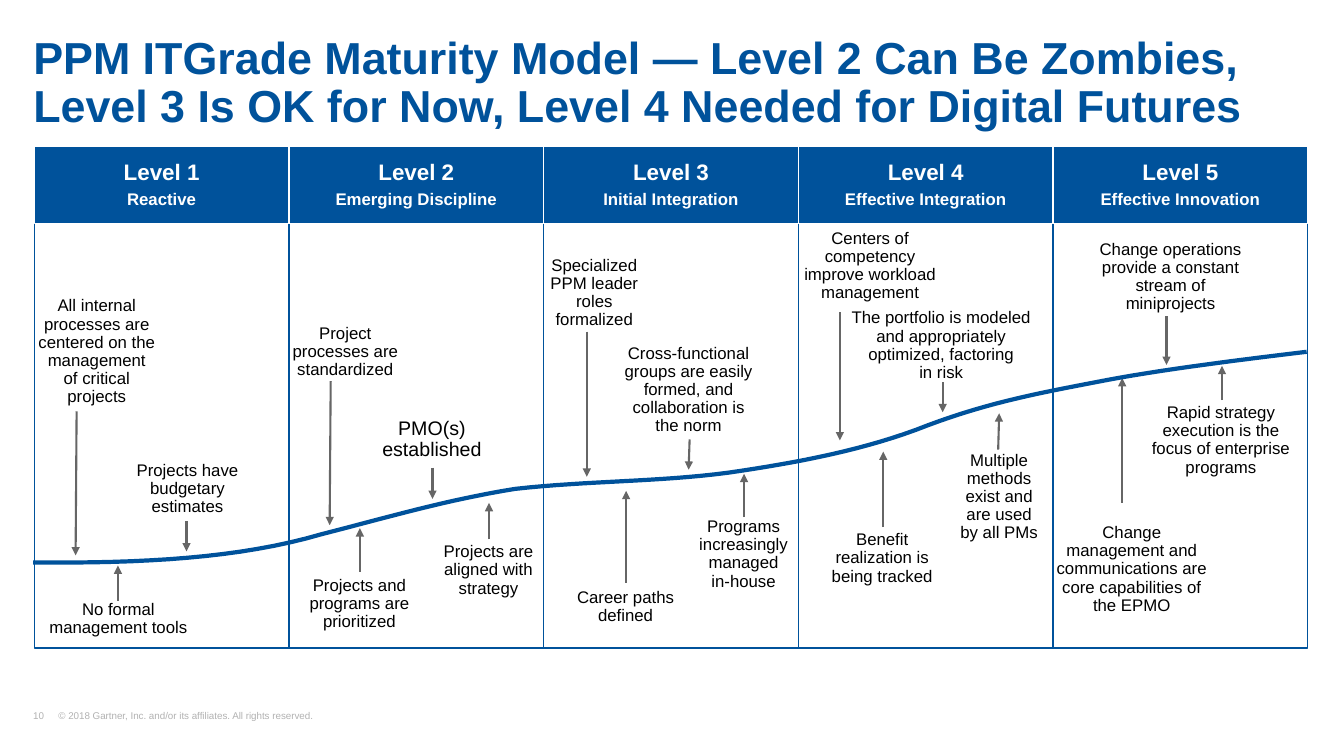
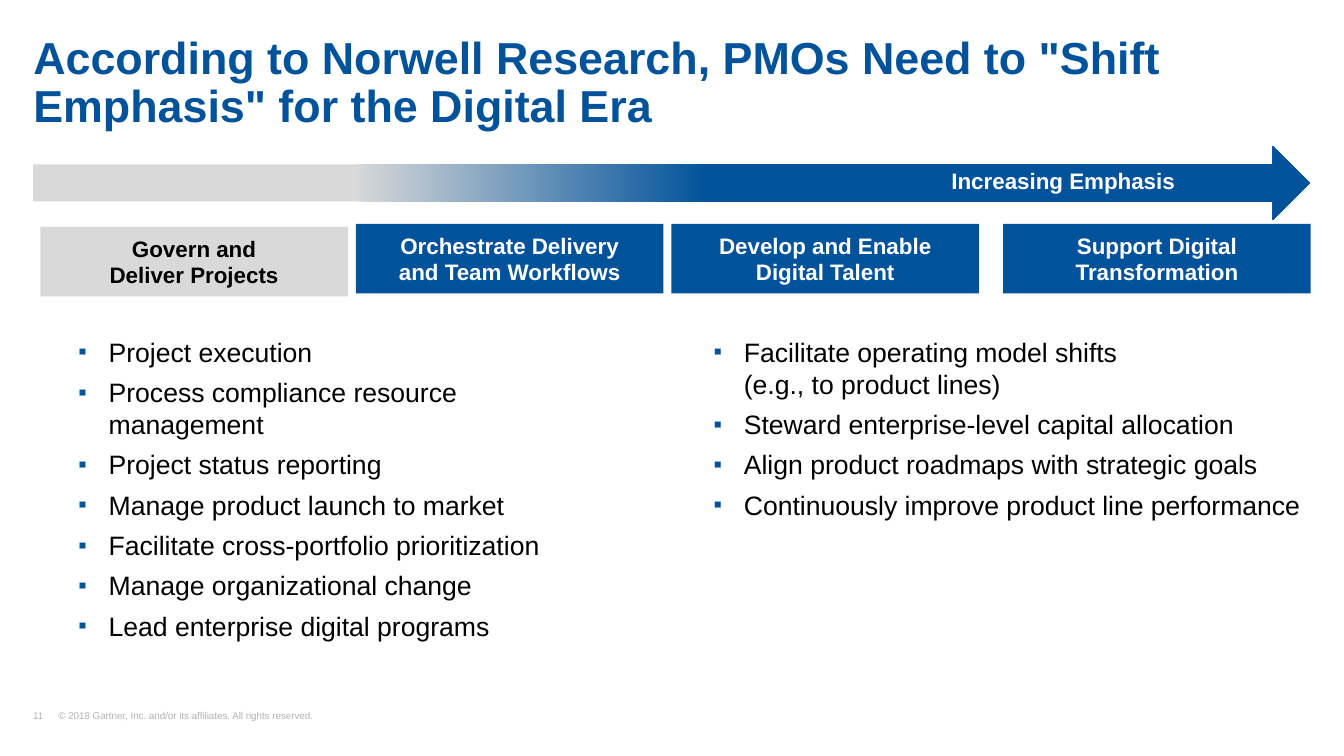
from lxml.etree import SubElement
from pptx import Presentation
from pptx.dml.color import RGBColor
from pptx.enum.shapes import MSO_CONNECTOR, MSO_SHAPE
from pptx.enum.text import MSO_ANCHOR, MSO_AUTO_SIZE, PP_ALIGN
from pptx.oxml.ns import qn
from pptx.util import Inches, Pt

COLORS = {
    "blue": "00529B",
    "silver": "D9D9D9",
    "arrow": "666666",
    "footer": "B2B2B2",
    "white": "FFFFFF",
    "black": "000000",
}
RGB = {name: RGBColor.from_string(value) for name, value in COLORS.items()}
FONT = "Arial"

prs = Presentation()
prs.slide_width, prs.slide_height = Inches(13.33), Inches(7.5)

# Square grid: 75 rows to the slide height
UNIT = prs.slide_height / 75
MARGIN = 3.4
LEVEL_WIDTH = 25.26
HEADER_TOP, HEADER_HEIGHT = 14.5, 7.7
FRAME_TOP, FRAME_BOTTOM = 20.9, 64.3


def grid(*cells):
    """Convert grid counts to slide lengths."""
    return [round(cell * UNIT) for cell in cells]


def write(paragraph, text, size, color, bold=False, align=PP_ALIGN.LEFT, spacing=0.9):
    """Fill a paragraph with one run per line of text."""
    paragraph.alignment = align
    paragraph.line_spacing = spacing
    for index, line in enumerate(text.split("\n")):
        if index:
            paragraph.add_line_break()
        run = paragraph.add_run()
        run.text = line
        run.font.name, run.font.size, run.font.bold = FONT, Pt(size), bold
        run.font.color.rgb = RGB[color]


# Titles and footers
TITLES = {
    10: "PPM ITGrade Maturity Model — Level 2 Can Be Zombies, "
        "Level 3 Is OK for Now, Level 4 Needed for Digital Futures",
    11: 'According to Norwell Research, PMOs Need to "Shift Emphasis" for the Digital Era',
}
slides = []
for number, heading in TITLES.items():
    slide = prs.slides.add_slide(prs.slide_layouts[5])
    slides.append(slide)
    title = slide.shapes.title
    title.left, title.top, title.width, title.height = grid(3.3, 2.5, 126.6, 10.7)
    footer = slide.shapes.add_textbox(*grid(3.3, 70.5, 32.3, 1.1))
    for frame, inset, anchor in (
        (title.text_frame, 1, MSO_ANCHOR.TOP),
        (footer.text_frame, 0, MSO_ANCHOR.BOTTOM),
    ):
        frame.margin_left = frame.margin_right = frame.margin_bottom = 0
        frame.margin_top = grid(inset)[0]
        frame.vertical_anchor = anchor
        frame.word_wrap = True
        frame.auto_size = MSO_AUTO_SIZE.NONE
    write(title.text_frame.paragraphs[0], heading, 32, "blue", bold=True)
    credit = footer.text_frame.paragraphs[0]
    tabs = SubElement(credit._p.get_or_add_pPr(), qn("a:tabLst"))
    SubElement(tabs, qn("a:tab"), pos=str(Inches(0.25)), algn="l")
    write(credit, f"{number}\t© 2018 Gartner, Inc. and/or its affiliates. All rights reserved.",
          7, "footer")
maturity, emphasis = slides

# Practices along the curve: text, box, arrow from and to, text size
PRACTICES = [
    ("All internal\nprocesses are\ncentered on the\nmanagement\nof critical\nprojects",
     (3, 29.4, 13.2, 10.9), (7.6, 40.8), (7.5, 55.1), 12),
    ("Projects have budgetary estimates",
     (12.9, 45.7, 11.4, 5.5), (18.5, 51.7), (18.5, 54.7), 12),
    ("No formal\nmanagement tools",
     (3.6, 59.6, 16.3, 3.6), (11.7, 59.6), (11.7, 56.1), 12),
    ("Project processes are standardized",
     (27.8, 32.1, 12.9, 5.5), (32.8, 37.8), (32.7, 52.1), 12),
    ("PMO(s)\nestablished",
     (34.2, 41.5, 17.3, 4.2), (42.9, 46.4), (42.9, 49.5), 14),
    ("Projects and programs are prioritized",
     (29.9, 57.2, 11.5, 5.5), (35.7, 56.7), (35.7, 52.4), 12),
    ("Projects are aligned with strategy",
     (43.7, 53.9, 9.5, 5.5), (48.5, 53.5), (48.5, 49.9), 12),
    ("Specialized PPM leader roles formalized",
     (53.6, 25.4, 10.7, 7.3), (58.2, 32.9), (58.2, 47.3), 12),
    ("Cross-functional groups are easily formed, and collaboration is the norm",
     (61.6, 34.1, 13.4, 9.1), (68.4, 43.6), (68.3, 46.6), 12),
    ("Career paths\ndefined",
     (55.8, 58.4, 12.5, 3.6), (62.1, 57.8), (62.1, 48.7), 12),
    ("Programs increasingly managed\nin-house",
     (68.5, 51.4, 10.5, 7.3), (73.8, 51.3), (73.8, 47), 12),
    ("Centers of competency improve workload management",
     (79.3, 22.7, 14, 7.3), (83.3, 31), (83.3, 43.7), 12),
    ("The portfolio is modeled and appropriately optimized, factoring\nin risk",
     (84.2, 30.6, 18.3, 7.3), (93.5, 37.9), (93.5, 40.9), 12),
    ("Benefit realization is being tracked",
     (81.5, 52.7, 12, 5.5), (87.6, 52.3), (87.6, 44.8), 12),
    ("Multiple methods exist and are used by all PMs",
     (94.8, 44.8, 8.6, 9.1), (99, 44.6), (99.1, 41), 12),
    ("Change operations provide a constant stream of\nminiprojects",
     (108.7, 23.8, 14.8, 7.3), (115.7, 31.4), (115.7, 36.2), 12),
    ("Change management and communications are core capabilities of the EPMO",
     (104.7, 52, 15.1, 9.2), (111.3, 49.9), (111.3, 37.5), 12),
    ("Rapid strategy execution is the focus of enterprise programs",
     (114.1, 40.1, 14, 7.3), (121.2, 39.7), (121.2, 36.3), 12),
]

# Level dividers and practice arrows
dividers = [MARGIN + LEVEL_WIDTH * level for level in range(1, 5)]
connections = [((x, HEADER_TOP), (x, FRAME_BOTTOM), "blue", 1) for x in dividers]
connections += [(start, end, "arrow", 1.5) for _, _, start, end, _ in PRACTICES]
for start, end, color, width in connections:
    connector = maturity.shapes.add_connector(MSO_CONNECTOR.STRAIGHT, *grid(*start, *end))
    connector.line.color.rgb = RGB[color]
    connector.line.width = Pt(width)
    if color == "arrow":
        SubElement(connector.get_or_add_ln(), qn("a:tailEnd"), type="triangle")
    SubElement(connector.element.spPr, qn("a:effectLst"))

# Maturity curve, each Bezier piece drawn in short steps
CURVE_START = (3.3, 55.8)
CURVE_PIECES = [
    ((14.1, 55.9), (23.7, 55.4), (31.9, 53)),
    ((38.9, 51.2), (44.3, 49.6), (51.1, 48.5)),
    ((58.3, 47.7), (65.4, 47.8), (72.2, 46.9)),
    ((79.1, 45.9), (86, 44.6), (92, 42.2)),
    ((98.4, 39.8), (103.6, 38.9), (109.8, 37.7)),
    ((116.1, 36.5), (126.3, 35.3), (129.6, 34.9)),
]
STEPS = 16
points, here = [], CURVE_START
for first, second, end in CURVE_PIECES:
    for step in range(1, STEPS + 1):
        t = step / STEPS
        weights = ((1 - t) ** 3, 3 * t * (1 - t) ** 2, 3 * t ** 2 * (1 - t), t ** 3)
        controls = (here, first, second, end)
        points.append(grid(*(sum(w * c[axis] for w, c in zip(weights, controls))
                             for axis in (0, 1))))
    here = end
builder = maturity.shapes.build_freeform(*grid(*CURVE_START))
builder.add_line_segments(points, close=False)
curve = builder.convert_to_shape()
curve.shadow.inherit = False
curve.fill.background()
curve.line.color.rgb = RGB["blue"]
curve.line.width = Pt(3)

# Practice texts sit at the arrow's end of their box
for text, box, start, end, size in PRACTICES:
    frame = maturity.shapes.add_textbox(*grid(*box)).text_frame
    frame.margin_left = frame.margin_right = frame.margin_top = frame.margin_bottom = 0
    frame.word_wrap = True
    points_down = start[1] < end[1]
    frame.vertical_anchor = MSO_ANCHOR.BOTTOM if points_down else MSO_ANCHOR.TOP
    write(frame.paragraphs[0], text, size, "black", align=PP_ALIGN.CENTER)

# Panels: slide, box, fill, border, text colour, line spacing, paragraphs with sizes
LEVELS = ["Reactive", "Emerging Discipline", "Initial Integration",
          "Effective Integration", "Effective Innovation"]
THEMES = [
    ("Govern and\nDeliver Projects", 4, 22.5, "silver", "black"),
    ("Orchestrate Delivery\nand Team Workflows", 35.3, 22.2, "blue", "white"),
    ("Develop and Enable\nDigital Talent", 66.6, 22.2, "blue", "white"),
    ("Support Digital\nTransformation", 99.5, 22.2, "blue", "white"),
]
panels = [(maturity, (MARGIN, FRAME_TOP, 5 * LEVEL_WIDTH, FRAME_BOTTOM - FRAME_TOP),
           None, "blue", None, 1, [])]
panels += [
    (maturity, (MARGIN + LEVEL_WIDTH * index, HEADER_TOP, LEVEL_WIDTH, HEADER_HEIGHT),
     "blue", "white", "white", 0.9, [(f"Level {index + 1}", 16), (name, 12)])
    for index, name in enumerate(LEVELS)
]
panels += [(emphasis, (x, y, 30.5, 6.9), fill, None, ink, 1, [(text, 16)])
           for text, x, y, fill, ink in THEMES]
for slide, box, fill, border, ink, spacing, paragraphs in panels:
    panel = slide.shapes.add_shape(MSO_SHAPE.RECTANGLE, *grid(*box))
    panel.shadow.inherit = False
    if fill:
        panel.fill.solid()
        panel.fill.fore_color.rgb = RGB[fill]
    else:
        panel.fill.background()
    if border:
        panel.line.color.rgb = RGB[border]
        panel.line.width = Pt(1)
    else:
        panel.line.fill.background()
    frame = panel.text_frame
    frame.word_wrap = False
    frame.vertical_anchor = MSO_ANCHOR.MIDDLE
    for index, (text, size) in enumerate(paragraphs):
        paragraph = frame.add_paragraph() if index else frame.paragraphs[0]
        if index:
            paragraph.space_before = Pt(4)
        write(paragraph, text, size, ink, True, PP_ALIGN.CENTER, spacing)

# Emphasis arrow
band = emphasis.shapes.add_shape(MSO_SHAPE.RIGHT_ARROW, *grid(3.3, 14.5, 126.6, 7.3))
band.shadow.inherit = False
band.line.fill.background()
band.fill.gradient()
band.fill.gradient_angle = 0
for stop, (position, color) in zip(band.fill.gradient_stops, ((0.25, "silver"), (0.53, "blue"))):
    stop.position = position
    stop.color.rgb = RGB[color]
caption = emphasis.shapes.add_textbox(*grid(93.2, 16.4, 24.5, 3.4)).text_frame
caption.word_wrap = False
write(caption.paragraphs[0], "Increasing Emphasis", 16, "white", True, PP_ALIGN.CENTER)

# Duties
DUTIES = [
    ((6.8, 33.3, 49.5, 31.1), [
        "Project execution",
        "Process compliance resource management",
        "Project status reporting",
        "Manage product launch to market",
        "Facilitate cross-portfolio prioritization",
        "Manage organizational change",
        "Lead enterprise digital programs",
    ]),
    ((69.8, 33.3, 62.2, 19), [
        "Facilitate operating model shifts\n(e.g., to product lines)",
        "Steward enterprise-level capital allocation",
        "Align product roadmaps with strategic goals",
        "Continuously improve product line performance",
    ]),
]
HANGING = Inches(0.3)
for box, duties in DUTIES:
    frame = emphasis.shapes.add_textbox(*grid(*box)).text_frame
    frame.word_wrap = True
    frame.margin_top = 0
    for index, duty in enumerate(duties):
        paragraph = frame.add_paragraph() if index else frame.paragraphs[0]
        properties = paragraph._p.get_or_add_pPr()
        properties.set("marL", str(HANGING))
        properties.set("indent", str(-HANGING))
        bullet_color = SubElement(properties, qn("a:buClr"))
        SubElement(bullet_color, qn("a:srgbClr"), val=COLORS["blue"])
        SubElement(properties, qn("a:buSzPct"), val="90000")
        SubElement(properties, qn("a:buFont"), typeface=FONT)
        SubElement(properties, qn("a:buChar"), char="▪")
        paragraph.space_after = Pt(6)
        write(paragraph, duty, 19, "black", spacing=1.0)

prs.save("out.pptx")
